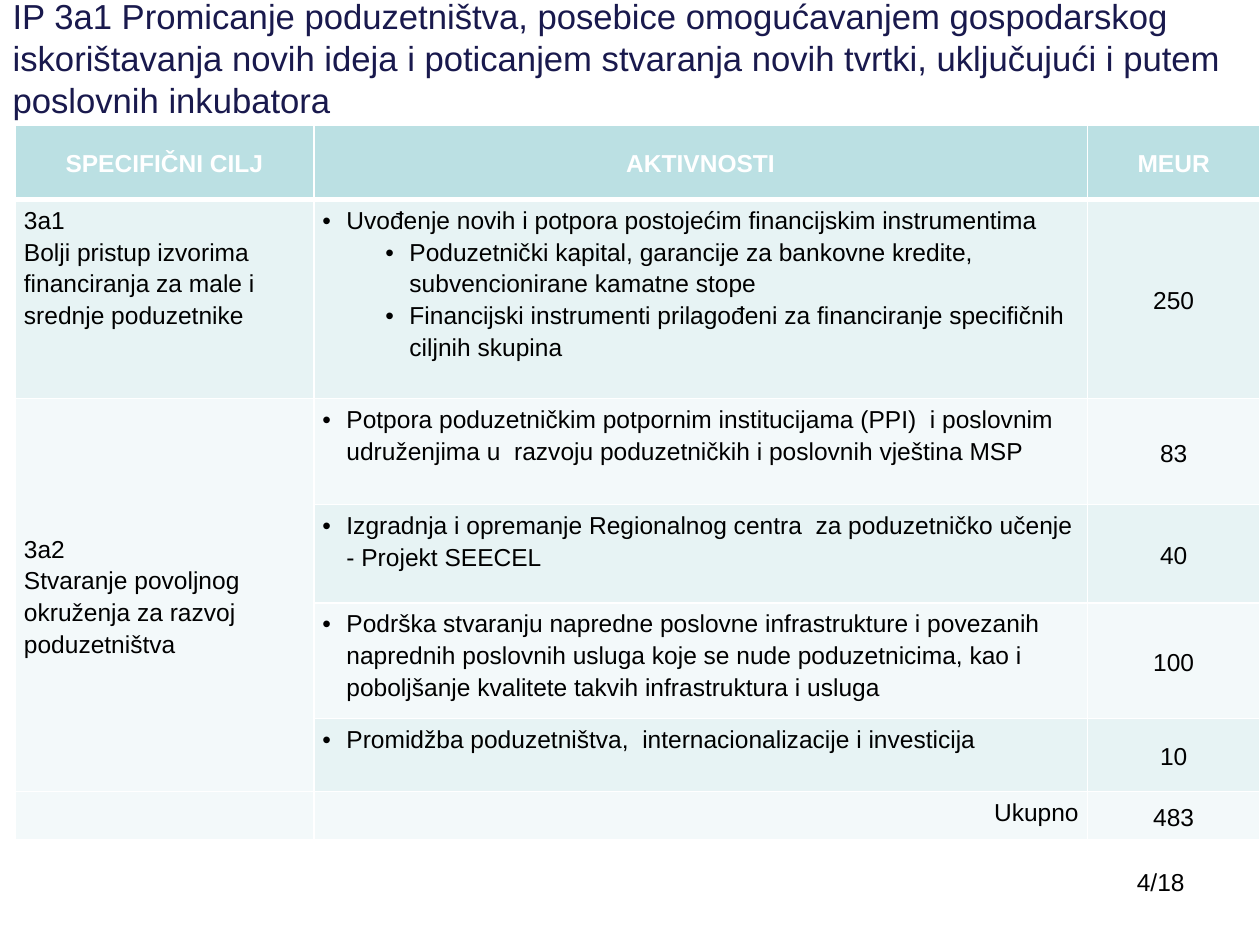
from lxml.etree import SubElement
from pptx import Presentation
from pptx.dml.color import RGBColor
from pptx.enum.text import MSO_ANCHOR as Anchor, MSO_AUTO_SIZE as AutoSize, PP_ALIGN as Align
from pptx.oxml.ns import qn
from pptx.util import Pt

COLORS = {
    "title": "19194D",
    "text": "000000",
    "white": "FFFFFF",
    "header": "BBE0E3",
    "band": "E7F3F4",
    "pale": "F3F9FA",
}
FONT = "Arial"
COLUMNS = [170.6, 442.1, 98.6]
ROWS = [42.5, 113.8, 60.5, 56.2, 66.2, 41.8, 27.4]
HEADINGS = ["SPECIFIČNI CILJ", "AKTIVNOSTI", "MEUR"]
GOALS = {
    1: ["3a1", "Bolji pristup izvorima financiranja za male i srednje poduzetnike"],
    2: ["3a2", "Stvaranje povoljnog okruženja za razvoj poduzetništva"],
}
ACTIVITIES = [
    (["Uvođenje novih i potpora postojećim financijskim instrumentima",
      "Poduzetnički kapital, garancije za bankovne kredite, subvencionirane kamatne stope",
      "Financijski instrumenti prilagođeni za financiranje specifičnih ciljnih skupina"], "250"),
    (["Potpora poduzetničkim potpornim institucijama (PPI)  i poslovnim udruženjima u  "
      "razvoju poduzetničkih i poslovnih vještina MSP"], "83"),
    (["Izgradnja i opremanje Regionalnog centra  za poduzetničko učenje - Projekt SEECEL"], "40"),
    (["Podrška stvaranju napredne poslovne infrastrukture i povezanih naprednih poslovnih "
      "usluga koje se nude poduzetnicima, kao i poboljšanje kvalitete takvih "
      "infrastruktura i usluga"], "100"),
    (["Promidžba poduzetništva,  internacionalizacije i investicija"], "10"),
]


def color(key):
    return RGBColor.from_string(COLORS[key])


def add_text(paragraph, words, size=14, ink="text", bold=False):
    run = paragraph.add_run()
    run.text = words
    run.font.name = FONT
    run.font.size = Pt(size)
    run.font.bold = bold
    run.font.color.rgb = color(ink)


def add_bullet(paragraph, level):
    paragraph.level = level
    properties = paragraph._p.get_or_add_pPr()
    properties.set("marL", str(Pt(13.7 + 36 * level)))
    properties.set("indent", str(Pt(-13.7)))
    SubElement(properties, qn("a:buFont"), typeface=FONT)
    SubElement(properties, qn("a:buChar"), char="•")


def style_cell(cell, fill, bottom=1):
    properties = cell._tc.get_or_add_tcPr()
    for side, width in (("L", 1), ("R", 1), ("T", 1), ("B", bottom)):
        line = SubElement(properties, qn(f"a:ln{side}"), w=str(Pt(width)))
        paint = SubElement(line, qn("a:solidFill"))
        SubElement(paint, qn("a:srgbClr"), val=COLORS["white"])
    cell.fill.solid()
    cell.fill.fore_color.rgb = color(fill)
    cell.margin_left = cell.margin_right = Pt(5)
    cell.margin_top = cell.margin_bottom = Pt(2.2)


def fill_cell(cell, lines, align=Align.LEFT, anchor=Anchor.MIDDLE, bullets=False, **look):
    cell.vertical_anchor = anchor
    for index, words in enumerate(lines):
        frame = cell.text_frame
        paragraph = frame.add_paragraph() if index else frame.paragraphs[0]
        paragraph.alignment = align
        paragraph.line_spacing = 1.15
        if bullets:
            add_bullet(paragraph, min(index, 1))
        add_text(paragraph, words, **look)


def place_title(slide, left, top, width, height):
    title = slide.shapes.title
    title.left, title.top, title.width, title.height = left, top, width, height
    frame = title.text_frame
    frame.word_wrap = True
    frame.auto_size = AutoSize.NONE
    frame.vertical_anchor = Anchor.MIDDLE
    frame.margin_left = frame.margin_right = Pt(7.2)
    frame.margin_top = frame.margin_bottom = 0
    heading = frame.paragraphs[0]
    heading.alignment = Align.LEFT
    heading.line_spacing = Pt(24)
    add_text(heading, "IP 3a1 Promicanje poduzetništva, posebice omogućavanjem gospodarskog "
             "iskorištavanja novih ideja i poticanjem stvaranja novih tvrtki, uključujući "
             "i putem poslovnih inkubatora", 19.8, "title")


def place_budget(slide, left, top, width, height):
    budget = slide.shapes.add_table(len(ROWS), len(COLUMNS), left, top, width, height).table
    for column, size in zip(budget.columns, COLUMNS):
        column.width = Pt(size)
    for row, size in zip(budget.rows, ROWS):
        row.height = Pt(size)

    total = len(ROWS) - 1
    for row in range(len(ROWS)):
        for column in range(len(COLUMNS)):
            if row == 0:
                fill = "header"
            elif row == total or row % 2 == 0:
                fill = "pale"
            else:
                fill = "band"
            style_cell(budget.cell(row, column), fill, 3 if row == 0 else 1)

    budget.cell(2, 0).merge(budget.cell(total - 1, 0))
    for column, heading in enumerate(HEADINGS):
        fill_cell(budget.cell(0, column), [heading], Align.CENTER, ink="white", bold=True)
    for row, goal in GOALS.items():
        fill_cell(budget.cell(row, 0), goal, anchor=Anchor.TOP if row == 1 else Anchor.MIDDLE)
    for row, (activities, amount) in enumerate(ACTIVITIES, 1):
        fill_cell(budget.cell(row, 1), activities, anchor=Anchor.TOP, bullets=True)
        fill_cell(budget.cell(row, 2), [amount], Align.CENTER)
    fill_cell(budget.cell(total, 1), ["Ukupno"], Align.RIGHT, Anchor.TOP)
    fill_cell(budget.cell(total, 2), ["483"], Align.CENTER)


def place_page_number(slide, left, top, width, height):
    frame = slide.shapes.add_textbox(left, top, width, height).text_frame
    frame.word_wrap = True
    page = frame.paragraphs[0]
    page.alignment = Align.RIGHT
    add_text(page, "4/18")


def main():
    deck = Presentation()
    deck.slide_width, deck.slide_height = Pt(720), Pt(540)
    slide = deck.slides.add_slide(deck.slide_layouts[5])
    place_title(slide, 0, 0, Pt(720), Pt(66.2))
    place_budget(slide, Pt(8.7), Pt(71.5), Pt(sum(COLUMNS)), Pt(sum(ROWS)))
    place_page_number(slide, Pt(516), Pt(492), Pt(168), Pt(37.5))
    deck.save("out.pptx")


if __name__ == "__main__":
    main()
